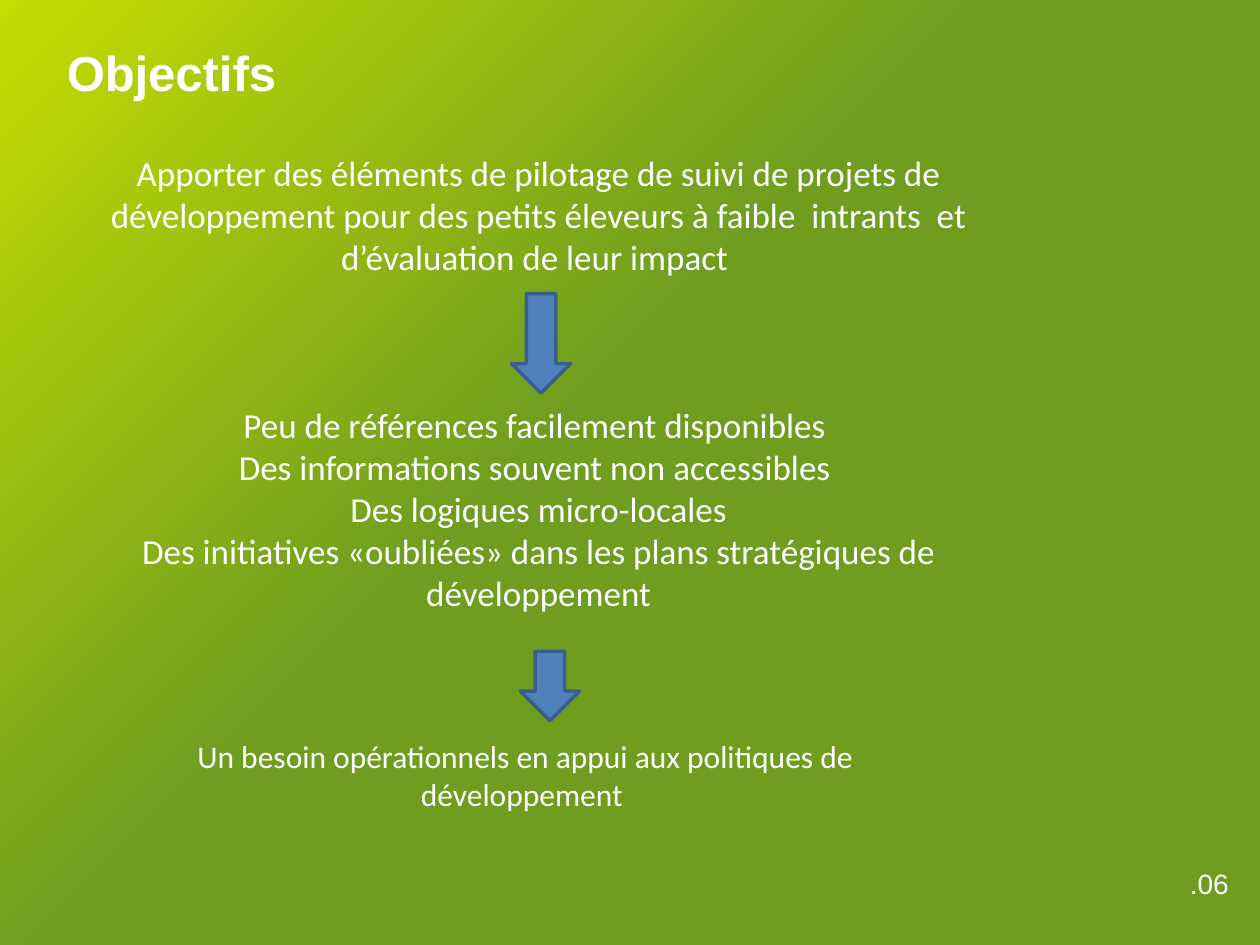
from dataclasses import dataclass
from typing import Any

from lxml.etree import SubElement as Sub
from pptx import Presentation
from pptx.dml.color import RGBColor as Rgb
from pptx.enum.shapes import MSO_SHAPE as Form
from pptx.enum.text import MSO_ANCHOR as Anchor, MSO_AUTO_SIZE as Fit, PP_ALIGN as Align
from pptx.oxml.ns import qn
from pptx.util import Inches, Pt


@dataclass(frozen=True)
class Theme:
    """Colours, fonts and type sizes of the slide."""
    white: str = "FFFFFF"
    green: str = "6F9D20"
    lime: str = "C5DD01"
    blue: str = "4F81BD"
    edge: str = "3A5F8C"
    head: str = "Arial"
    text: str = "Calibri"
    title: int = 28
    body: int = 20
    need: int = 18
    page: int = 16


@dataclass(frozen=True)
class Box:
    """Place and size in inches."""
    left: float
    top: float
    width: float
    height: float


THEME = Theme()
ARROWS = [Box(4.06, 2.33, 0.47, 0.79), Box(4.13, 5.17, 0.47, 0.55)]
GOAL = ("Apporter des éléments de pilotage de suivi de projets de développement "
        "pour des petits éleveurs à faible  intrants  et d’évaluation de leur impact ")
LIMITS = [
    "Peu de références facilement disponibles ",
    "Des informations souvent non accessibles ",
    "Des logiques micro-locales",
    "Des initiatives «oubliées» dans les plans stratégiques de développement",
]
NEED = "Un besoin opérationnels en appui aux politiques de développement "


def place(shape: Any, box: Box) -> None:
    """Move and size a shape."""
    shape.left, shape.top = Inches(box.left), Inches(box.top)
    shape.width, shape.height = Inches(box.width), Inches(box.height)


def write(shape: Any, lines: list[str], *, size: int, font: str = THEME.text,
          bold: bool = False, align: Align = Align.CENTER,
          gaps: dict[int, int] | None = None) -> None:
    """Fill a shape with plain paragraphs, with gaps in points before some."""
    frame = shape.text_frame
    frame.word_wrap = True
    frame.auto_size = Fit.NONE
    frame.vertical_anchor = Anchor.TOP
    for i, line in enumerate(lines):
        para = frame.add_paragraph() if i else frame.paragraphs[0]
        props = para._p.get_or_add_pPr()
        props.set("marL", "0")
        props.set("indent", "0")
        Sub(props, qn("a:buNone"))
        para.alignment = align
        para.space_before = Pt((gaps or {}).get(i, 0))
        run = para.add_run()
        run.text = line
        run.font.size, run.font.name, run.font.bold = Pt(size), font, bold
        run.font.color.rgb = Rgb.from_string(THEME.white)


def label(slide: Any, box: Box, text: str, **style: Any) -> None:
    """Add a text box."""
    shape = slide.shapes.add_textbox(0, 0, 0, 0)
    place(shape, box)
    write(shape, [text], **style)


def arrow(slide: Any, box: Box) -> None:
    """Add a down arrow."""
    shape = slide.shapes.add_shape(Form.DOWN_ARROW, 0, 0, 0, 0)
    place(shape, box)
    shape.shadow.inherit = False
    shape.fill.solid()
    shape.fill.fore_color.rgb = Rgb.from_string(THEME.blue)
    shape.line.color.rgb = Rgb.from_string(THEME.edge)
    shape.line.width = Pt(2)


def shade(slide: Any) -> None:
    """Give the slide a gradient that grows from its lower right corner."""
    slide.background.fill.gradient()
    grad = next(slide.element.iter(qn("a:gradFill")))
    for child in list(grad):
        grad.remove(child)
    stops = Sub(grad, qn("a:gsLst"))
    for pos, color in ((55, THEME.green), (100, THEME.lime)):
        stop = Sub(stops, qn("a:gs"), pos=str(pos * 1000))
        Sub(stop, qn("a:srgbClr"), val=color)
    way = Sub(grad, qn("a:path"), path="circle")
    Sub(way, qn("a:fillToRect"), l="100000", t="100000")


def main() -> None:
    """Build and save the slide."""
    deck = Presentation()
    deck.slide_width, deck.slide_height = Inches(10), Inches(7.5)
    slide = deck.slides.add_slide(deck.slide_layouts[1])
    shade(slide)
    title, body = slide.shapes.title, slide.placeholders[1]
    place(title, Box(0.43, 0.29, 7.4, 0.57))
    write(title, ["Objectifs"], size=THEME.title, font=THEME.head,
          bold=True, align=Align.LEFT)
    place(body, Box(0.43, 1.15, 7.69, 4.11))
    write(body, [GOAL, *LIMITS], size=THEME.body, gaps={1: 72})
    label(slide, Box(8.62, 6.83, 1.23, 0.27), ".06", size=THEME.page,
          font=THEME.head, align=Align.RIGHT)
    for box in ARROWS:
        arrow(slide, box)
    label(slide, Box(1.06, 5.8, 6.22, 0.71), NEED, size=THEME.need)
    deck.save("out.pptx")


if __name__ == "__main__":
    main()
